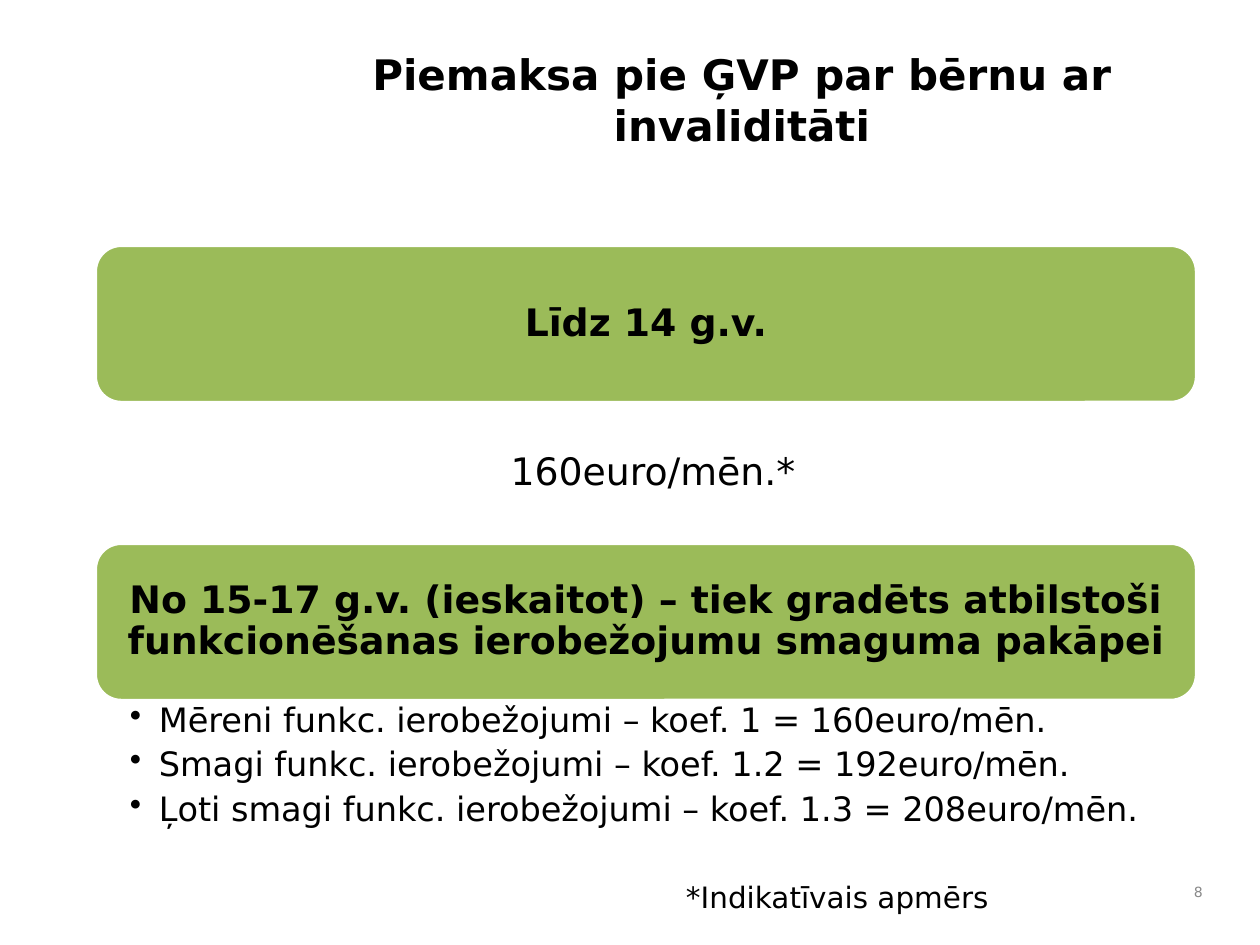
from lxml.etree import SubElement
from pptx import Presentation
from pptx.dml.color import RGBColor
from pptx.enum.shapes import MSO_SHAPE as Shape
from pptx.enum.text import MSO_ANCHOR as Anchor, MSO_AUTO_SIZE as AutoSize, PP_ALIGN as Align
from pptx.oxml.ns import qn
from pptx.util import Pt

BLACK = RGBColor(0x00, 0x00, 0x00)
WHITE = RGBColor(0xFF, 0xFF, 0xFF)
GREEN = RGBColor(0x9B, 0xBB, 0x59)
GREY = RGBColor(0x89, 0x89, 0x89)
FONT = "DejaVu Sans"

TITLE = "Piemaksa pie ĢVP par bērnu ar invaliditāti"
SECTIONS = [
    ("Līdz 14 g.v.", ["160euro/mēn.*"]),
    ("No 15-17 g.v. (ieskaitot) – tiek gradēts atbilstoši funkcionēšanas "
     "ierobežojumu smaguma pakāpei",
     ["Mēreni funkc. ierobežojumi – koef. 1 = 160euro/mēn.",
      "Smagi funkc. ierobežojumi – koef. 1.2 = 192euro/mēn.",
      "Ļoti smagi funkc. ierobežojumi – koef. 1.3 = 208euro/mēn."]),
]
FOOTNOTE = "*Indikatīvais apmērs"
PAGE = "8"

PX = 6048
SLIDE = (1260, 945)
TITLE_BOX = (286, 53, 912, 92)
FOOTNOTE_BOX = (671, 871, 503, 42)
PAGE_BOX = (1176, 871, 42, 42)
LEFT, TOP, WIDTH = 95, 245, 1102
HEADING_HEIGHT, DETAIL_HEIGHT = 158, 140
BULLET_INDENT = 29

PLAIN_INSETS = (15, 8, 15, 8)
HEADING_INSETS = (11, 11, 11, 11)
AMOUNT_INSETS = (35, 5, 21, 5)
LIST_INSETS = (35, 3, 18, 3)
TIGHT = {"line_spacing": 0.9, "space_after": Pt(3.7)}


def px(values):
    return [value * PX for value in values]


def apply(target, formats):
    for name, value in formats.items():
        setattr(target, name, value)


def add_bullet(paragraph):
    properties = paragraph._p.get_or_add_pPr()
    properties.set("marL", str(BULLET_INDENT * PX))
    properties.set("indent", str(-BULLET_INDENT * PX))
    SubElement(properties, qn("a:buChar")).set("char", "•")


def write(holder, lines, size, insets, align, anchor=Anchor.MIDDLE, color=BLACK,
          bold=False, bullets=False, spacing=None):
    frame = holder.text_frame
    left, top, right, bottom = px(insets)
    apply(frame, {"text": "\n".join(lines), "word_wrap": True, "auto_size": AutoSize.NONE,
                  "vertical_anchor": anchor, "margin_left": left, "margin_top": top,
                  "margin_right": right, "margin_bottom": bottom})
    for paragraph in frame.paragraphs:
        apply(paragraph, {"alignment": align, **(spacing or {})})
        if bullets:
            add_bullet(paragraph)
        for run in paragraph.runs:
            apply(run.font, {"name": FONT, "size": Pt(size), "bold": bold})
            run.font.color.rgb = color


def add_heading(shapes, heading, top):
    banner = shapes.add_shape(Shape.ROUNDED_RECTANGLE,
                              *px((LEFT, top, WIDTH, HEADING_HEIGHT)))
    banner.shadow.inherit = False
    banner.fill.solid()
    banner.fill.fore_color.rgb = GREEN
    banner.line.color.rgb = WHITE
    banner.line.width = Pt(2)
    write(banner, [heading], 18, HEADING_INSETS, Align.CENTER, bold=True, spacing=TIGHT)


def add_details(shapes, details, top):
    box = shapes.add_textbox(*px((LEFT, top, WIDTH, DETAIL_HEIGHT)))
    if len(details) > 1:
        write(box, details, 16, LIST_INSETS, Align.JUSTIFY, Anchor.TOP,
              bullets=True, spacing=TIGHT)
    else:
        write(box, details, 18, AMOUNT_INSETS, Align.CENTER, spacing=TIGHT)


def main():
    """Build the slide on the supplement for a child with a disability."""
    deck = Presentation()
    deck.slide_width, deck.slide_height = px(SLIDE)
    shapes = deck.slides.add_slide(deck.slide_layouts[5]).shapes

    title = shapes.title
    apply(title, dict(zip(("left", "top", "width", "height"), px(TITLE_BOX))))
    write(title, [TITLE], 20, PLAIN_INSETS, Align.CENTER, bold=True)

    for index, (heading, details) in enumerate(SECTIONS):
        top = TOP + index * (HEADING_HEIGHT + DETAIL_HEIGHT)
        add_heading(shapes, heading, top)
        add_details(shapes, details, top + HEADING_HEIGHT)

    footnote = shapes.add_textbox(*px(FOOTNOTE_BOX))
    write(footnote, [FOOTNOTE], 14, PLAIN_INSETS, Align.LEFT, Anchor.TOP)
    page = shapes.add_textbox(*px(PAGE_BOX))
    write(page, [PAGE], 6.7, PLAIN_INSETS, Align.RIGHT, color=GREY)

    deck.save("out.pptx")


if __name__ == "__main__":
    main()
